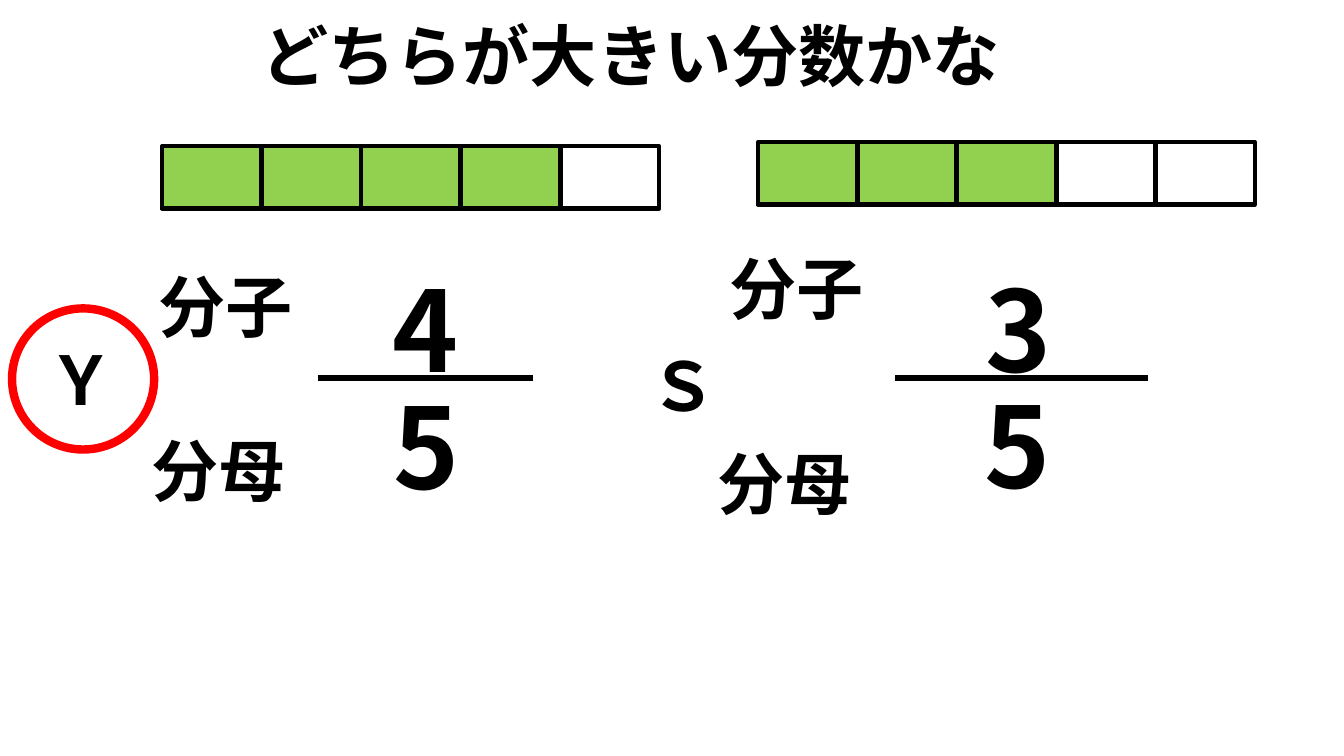
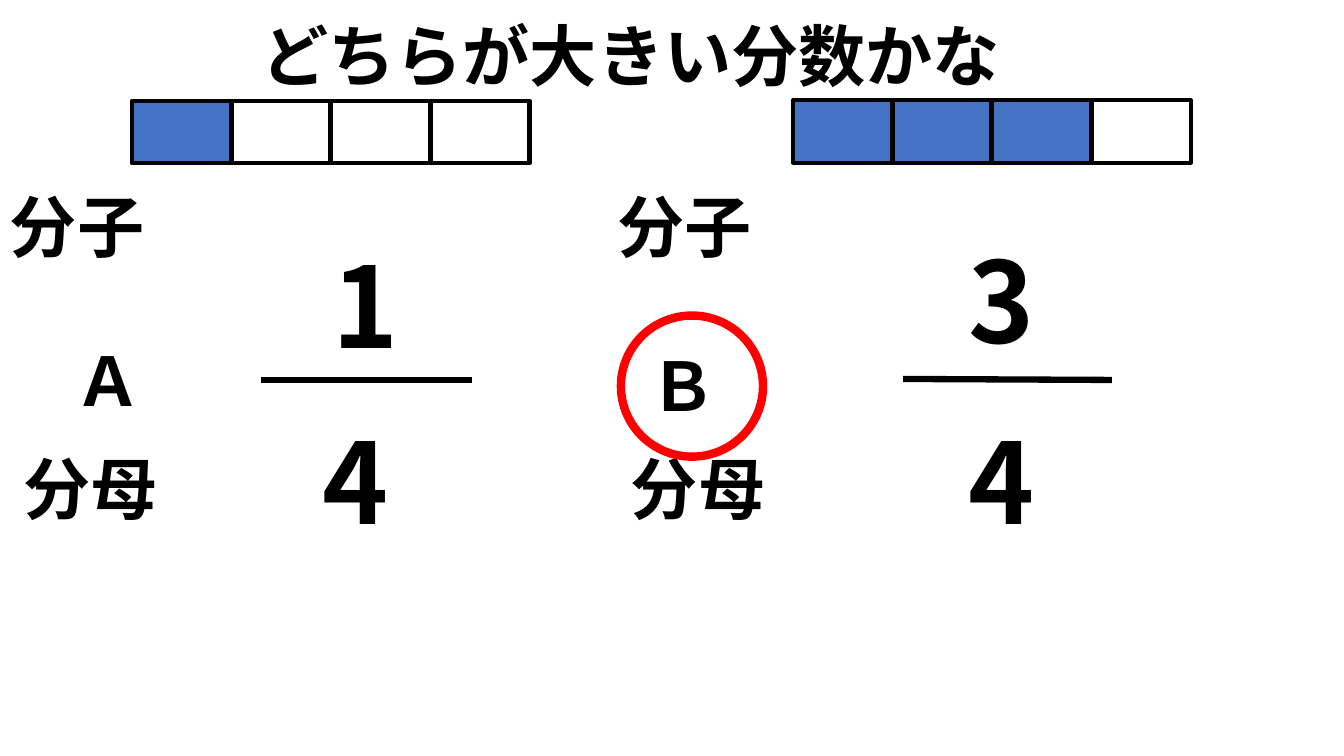
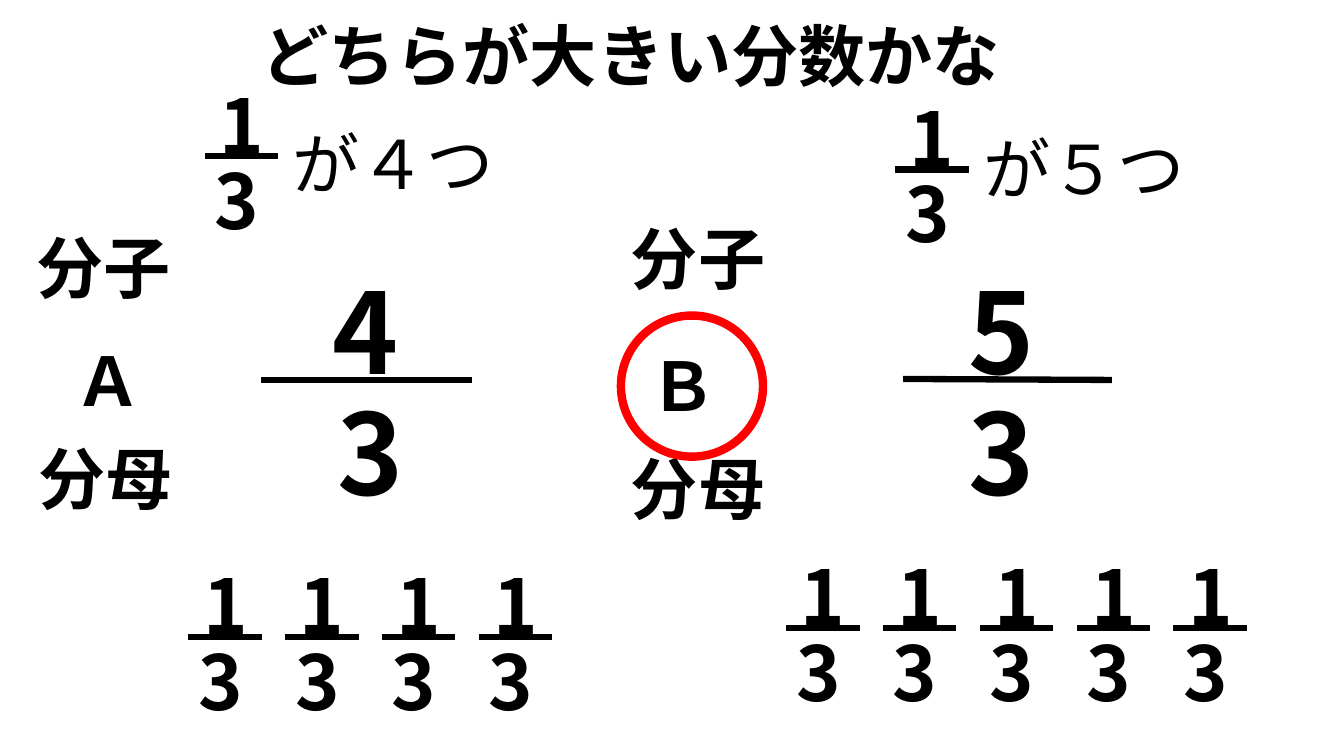
from dataclasses import dataclass

from lxml import etree
from pptx import Presentation
from pptx.dml.color import RGBColor
from pptx.enum.shapes import MSO_CONNECTOR, MSO_SHAPE
from pptx.enum.text import MSO_ANCHOR, MSO_AUTO_SIZE, PP_ALIGN
from pptx.oxml.ns import qn
from pptx.util import Pt

STRAIGHT = MSO_CONNECTOR.STRAIGHT
OVAL = MSO_SHAPE.OVAL
RECTANGLE = MSO_SHAPE.RECTANGLE
TOP = MSO_ANCHOR.TOP
GROW = MSO_AUTO_SIZE.SHAPE_TO_FIT_TEXT
LEFT = PP_ALIGN.LEFT
TITLE_ONLY = 5
QUESTION = "どちらが大きい分数かな"


@dataclass(frozen=True)
class Theme:
    """Colours, font, type sizes and line widths shared by the slides."""

    font: str = "Noto Sans CJK JP"
    ink: RGBColor = RGBColor(0, 0, 0)
    paper: RGBColor = RGBColor(255, 255, 255)
    green: RGBColor = RGBColor(0x92, 0xD0, 0x50)
    blue: RGBColor = RGBColor(0x44, 0x72, 0xC4)
    answer: RGBColor = RGBColor(255, 0, 0)
    text: float = 48
    digit: float = 80
    unit: float = 54
    fraction_line: float = 4.5
    cell_line: float = 3
    ring_line: float = 6


@dataclass(frozen=True)
class Side:
    """One fraction to compare: values, and the places of its parts."""

    letter: str
    letter_at: tuple
    numerator: str
    numerator_at: tuple
    denominator: str
    denominator_at: tuple
    line: tuple
    top_label_at: tuple
    bottom_label_at: tuple


@dataclass(frozen=True)
class Bar:
    """A bar of equal cells, some of them filled."""

    left: float
    top: float
    filled: int
    cells: int
    colour: RGBColor


THEME = Theme()


def set_all(target, values):
    """Set each attribute named in the dict."""
    for name, value in values.items():
        setattr(target, name, value)


def write(box, text, size=THEME.text, bold=True, wrap=True):
    """Put one formatted line of text into a box or placeholder."""
    frame = box.text_frame
    set_all(frame, {"word_wrap": wrap, "auto_size": GROW, "vertical_anchor": TOP})
    para = frame.paragraphs[0]
    para.alignment = LEFT
    span = para.add_run()
    span.text = text
    span.font.color.rgb = THEME.ink
    set_all(span.font, {"size": Pt(size), "bold": bold, "name": THEME.font})
    properties = span.font._element
    etree.SubElement(properties, qn("a:ea")).set("typeface", THEME.font)


def add_text(shapes, text, at, width, height=65.5, **style):
    """Add a text box with its top left corner at a point."""
    box = shapes.add_textbox(Pt(at[0]), Pt(at[1]), Pt(width), Pt(height))
    write(box, text, **style)


def add_line(shapes, start, end, width=THEME.fraction_line):
    """Add a straight black line without a shadow."""
    points = [Pt(value) for value in (*start, *end)]
    line = shapes.add_connector(STRAIGHT, *points)
    line.line.color.rgb = THEME.ink
    line.line.width = Pt(width)
    etree.SubElement(line._element.spPr, qn("a:effectLst"))


def add_shape(page, kind, place, fill, outline, width):
    """Add a flat preset shape, unfilled when fill is None."""
    shape = page.shapes.add_shape(kind, *[Pt(value) for value in place])
    shape.shadow.inherit = False
    if fill is None:
        shape.fill.background()
    else:
        shape.fill.solid()
        shape.fill.fore_color.rgb = fill
    shape.line.color.rgb = outline
    shape.line.width = Pt(width)


def add_bar(page, bar):
    """Draw a bar of cells with a rule along its left edge."""
    add_line(page.shapes, (bar.left, bar.top), (bar.left, bar.top + 45.4), THEME.cell_line)
    for index in range(bar.cells):
        fill = bar.colour if index < bar.filled else THEME.paper
        place = (bar.left + index * 71.1, bar.top, 70.6, 44.6)
        add_shape(page, RECTANGLE, place, fill, THEME.ink, THEME.cell_line)


def add_side(page, side):
    """Draw a large fraction with its letter and part names."""
    add_text(page.shapes, side.letter, side.letter_at, 63.4, wrap=False)
    left, start, right, end = side.line
    add_line(page.shapes, (left, start), (right, end))
    add_text(page.shapes, "分子", side.top_label_at, 118)
    add_text(page.shapes, "分母", side.bottom_label_at, 118)
    for digit, at in ((side.numerator, side.numerator_at), (side.denominator, side.denominator_at)):
        add_text(page.shapes, digit, at, 70, 104.4, size=THEME.digit)


def add_thirds(page, left, line_top, count=1):
    """Draw a row of grouped one-third fractions."""
    for index in range(count):
        shapes = page.shapes.add_group_shape().shapes
        x = left + index * 69.15
        add_line(shapes, (x, line_top), (x + 52.4, line_top))
        add_text(shapes, "3", (x, line_top - 5), 64, 72.7, size=THEME.unit)
        add_text(shapes, "1", (x + 3.4, line_top - 59), 64, 72.7, size=THEME.unit)


def add_page(deck, sides, ring_at, bars=()):
    """Add a titled slide that compares two fractions and rings the larger."""
    page = deck.slides.add_slide(deck.slide_layouts[TITLE_ONLY])
    title = page.shapes.title
    set_all(title, {"left": Pt(179.3), "top": Pt(6.5), "width": Pt(632.9), "height": Pt(65.5)})
    write(title, QUESTION)
    for side in sides:
        add_side(page, side)
    add_shape(page, OVAL, (*ring_at, 101.5, 100.8), None, THEME.answer, THEME.ring_line)
    for bar in bars:
        add_bar(page, bar)
    return page


def main():
    """Build the three comparison slides."""
    deck = Presentation()
    set_all(deck, {"slide_width": Pt(960), "slide_height": Pt(540)})
    left_line, right_line = (186.5, 271.4, 337, 271.4), (645.1, 270.7, 794.2, 271.4)
    a_at, b_at, b_ring = (46.1, 239), (456.5, 242.6), (443.5, 225.4)

    fifths = (
        Side("Ｙ", (26.6, 238.3), "4", (273.6, 182.2), "5", (274.3, 266.4),
             (226.8, 270, 380.9, 270), (105.8, 185.8), (100.8, 303.1)),
        Side("Ｓ", b_at, "3", (697, 182.2), "5", (696.2, 265.7),
             (639.4, 270, 820.1, 270), (514.1, 172.8), (505.4, 312.5)),
    )
    add_page(deck, fifths, (8.6, 220.3),
             (Bar(115.9, 104.4, 4, 5, THEME.green), Bar(541.4, 101.5, 3, 5, THEME.green)))

    quarters = (
        Side("Ａ", a_at, "1", (230.4, 165.6), "4", (223.2, 290.9),
             left_line, (0, 128.9), (9.4, 316.1)),
        Side("Ｂ", b_at, "3", (684.7, 162), "4", (684.7, 290.9),
             right_line, (434.2, 128.9), (443.5, 316.1)),
    )
    add_page(deck, quarters, b_ring,
             (Bar(94.3, 72, 1, 4, THEME.blue), Bar(566.6, 71.6, 3, 4, THEME.blue)))

    thirds = (
        Side("Ａ", a_at, "4", (230.4, 184.3), "3", (234, 270.7),
             left_line, (18.7, 158.4), (20.2, 308.9)),
        Side("Ｂ", b_at, "5", (684.7, 184.3), "3", (684.7, 270.7),
             right_line, (443.5, 151.9), (443.5, 316.1)),
    )
    page = add_page(deck, thirds, b_ring)
    for left, line_top, count in ((134.6, 455, 4), (561.6, 448.6, 5), (146.2, 111.6, 1), (639.4, 121, 1)):
        add_thirds(page, left, line_top, count)
    for text, at in (("が４つ", (201.6, 83.5)), ("が５つ", (695.5, 87.1))):
        add_text(page.shapes, text, at, 159.8, bold=False, wrap=False)

    deck.save("out.pptx")


if __name__ == "__main__":
    main()
